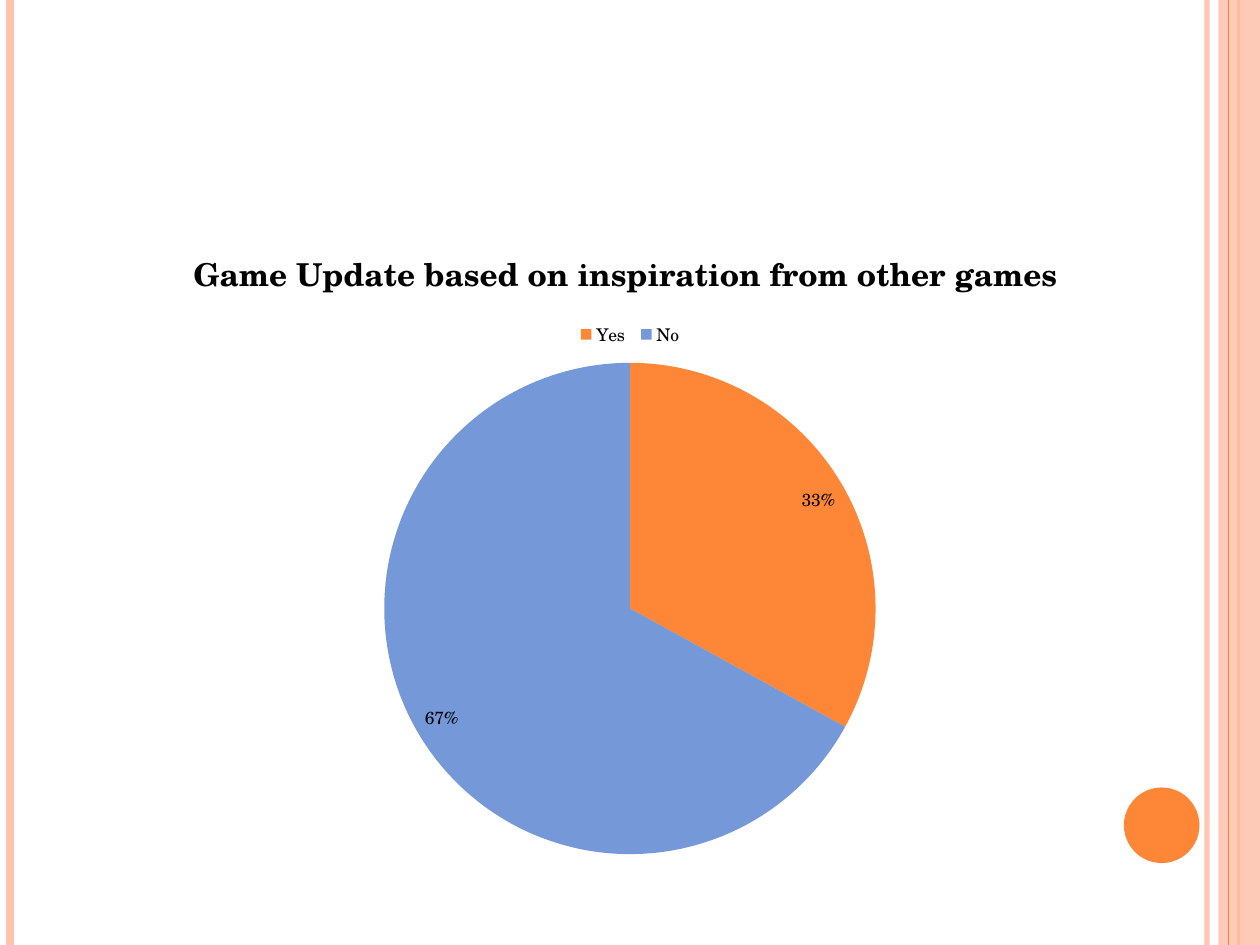
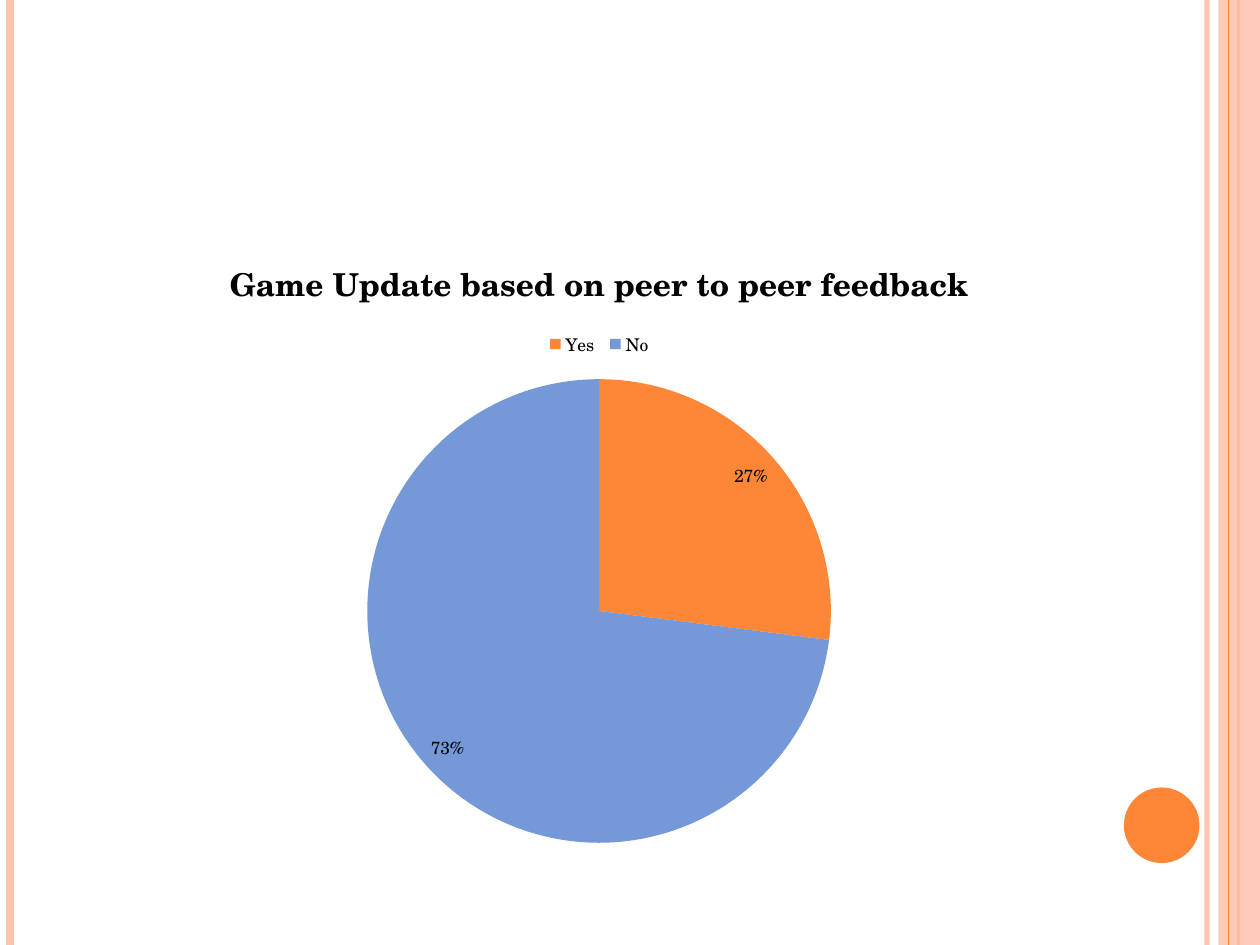
from dataclasses import dataclass

from lxml import etree
from pptx import Presentation
from pptx.chart import data as chart_data
from pptx.dml.color import RGBColor
from pptx.enum import chart as charts, shapes
from pptx.oxml import ns, parse_xml
from pptx.util import Inches, Pt


@dataclass(frozen=True)
class Theme:
    font: str = "TeX Gyre Schola"
    orange: RGBColor = RGBColor(0xFE, 0x86, 0x37)
    blue: RGBColor = RGBColor(0x75, 0x98, 0xD9)
    peach: RGBColor = RGBColor(0xFE, 0xC3, 0xAE)
    black: RGBColor = RGBColor(0, 0, 0)
    title_size: int = 18
    label_size: int = 10


@dataclass(frozen=True)
class Box:
    left: float
    top: float
    width: float
    height: float

    def lengths(self):
        return [Inches(n) for n in (self.left, self.top, self.width, self.height)]


THEME = Theme()
PAGE = Box(0, 0, 10, 7.5)
ANSWERS = ("Yes ", "No")


def set_opacity(element, percent):
    color = element.find(".//" + ns.qn("a:srgbClr"))
    etree.SubElement(color, ns.qn("a:alpha")).set("val", str(percent * 1000))


def add_stripe(slide, box, x, color, weight, opacity=100):
    x = Inches(box.left + x)
    stripe = slide.shapes.add_connector(
        shapes.MSO_CONNECTOR.STRAIGHT, x, Inches(box.top), x, Inches(box.top + box.height)
    )
    stripe.line.color.rgb = color
    stripe.line.width = Pt(weight)
    properties = stripe._element.spPr
    etree.SubElement(properties, ns.qn("a:effectLst"))
    if opacity < 100:
        set_opacity(properties, opacity)


def add_solid(slide, kind, box, color, opacity=100):
    shape = slide.shapes.add_shape(kind, *box.lengths())
    shape.shadow.inherit = False
    shape.fill.solid()
    shape.fill.fore_color.rgb = color
    shape.line.fill.background()
    if opacity < 100:
        set_opacity(shape._element.spPr, opacity)


def add_frame(slide, box):
    right = box.left + box.width
    bottom = box.top + box.height
    add_stripe(slide, box, box.width - 0.42, THEME.peach, 3, 93)
    add_stripe(slide, box, 0.08, THEME.peach, 4.5)
    add_stripe(slide, box, box.width - 0.17, THEME.orange, 1.5)
    band = Box(right - 0.33, box.top, 0.33, box.height)
    add_solid(slide, shapes.MSO_SHAPE.RECTANGLE, band, THEME.peach, 87)
    add_stripe(slide, box, box.width - 0.25, THEME.orange, 0.75)
    badge = Box(right - 1.08, bottom - 1.25, 0.6, 0.6)
    add_solid(slide, shapes.MSO_SHAPE.OVAL, badge, THEME.orange)


def style_font(font, size, bold=False):
    font.name = THEME.font
    font.size = Pt(size)
    font.bold = bold
    font.color.rgb = THEME.black


def place_pie(chart, box, pie_top, diameter):
    fractions = {
        "x": (box.width - diameter) / 2 / box.width,
        "y": pie_top / box.height,
        "w": diameter / box.width,
        "h": diameter / box.height,
    }
    modes = '<c:layoutTarget val="inner"/><c:xMode val="edge"/><c:yMode val="edge"/>'
    sizes = "".join(f'<c:{key} val="{value:.4f}"/>' for key, value in fractions.items())
    layout = parse_xml(
        f'<c:layout {ns.nsdecls("c")}><c:manualLayout>{modes}{sizes}</c:manualLayout></c:layout>'
    )
    plot_area = chart._chartSpace.chart.plotArea
    for automatic in plot_area.findall(ns.qn("c:layout")):
        plot_area.remove(automatic)
    plot_area.insert(0, layout)


def add_answer_pie(slide, box, title, shares, series_count, pie_top, diameter):
    data = chart_data.CategoryChartData()
    data.categories = ANSWERS
    for number in range(1, series_count + 1):
        data.add_series(f"Series {number}", shares)
    frame = slide.shapes.add_chart(charts.XL_CHART_TYPE.PIE, *box.lengths(), data)
    chart = frame.chart
    chart.replace_data(data)
    style_font(chart.font, THEME.label_size)

    chart.has_title = True
    chart.chart_title.include_in_layout = False
    paragraph = chart.chart_title.text_frame.paragraphs[0]
    paragraph.text = title
    style_font(paragraph.runs[0].font, THEME.title_size, True)

    chart.has_legend = True
    chart.legend.position = charts.XL_LEGEND_POSITION.TOP
    chart.legend.include_in_layout = False
    chart.plots[0].vary_by_categories = True
    for series in chart.plots[0].series:
        for index, color in enumerate((THEME.orange, THEME.blue)):
            fill = series.points[index].format.fill
            fill.solid()
            fill.fore_color.rgb = color
        labels = series.data_labels
        labels.show_percentage = True
        labels.show_value = False
        labels.number_format = "0%"
        labels.number_format_is_linked = False
        labels.position = charts.XL_LABEL_POSITION.INSIDE_END
        style_font(labels.font, THEME.label_size)
    place_pie(chart, box, pie_top, diameter)


def add_pie_slide(presentation, **pie):
    slide = presentation.slides.add_slide(presentation.slide_layouts[6])
    add_frame(slide, PAGE)
    add_answer_pie(slide, **pie)


def main():
    presentation = Presentation()
    presentation.slide_width = Inches(PAGE.width)
    presentation.slide_height = Inches(PAGE.height)
    add_pie_slide(
        presentation,
        box=Box(0.5, 1.75, 9, 5.17),
        title="Game Update based on inspiration from other games ",
        shares=(33, 67),
        series_count=3,
        pie_top=1.13,
        diameter=3.9,
    )
    add_pie_slide(
        presentation,
        box=Box(0.67, 1.83, 8.17, 5),
        title="Game Update based on peer to peer feedback",
        shares=(27, 73),
        series_count=1,
        pie_top=1.18,
        diameter=3.68,
    )
    presentation.save("out.pptx")


if __name__ == "__main__":
    main()
